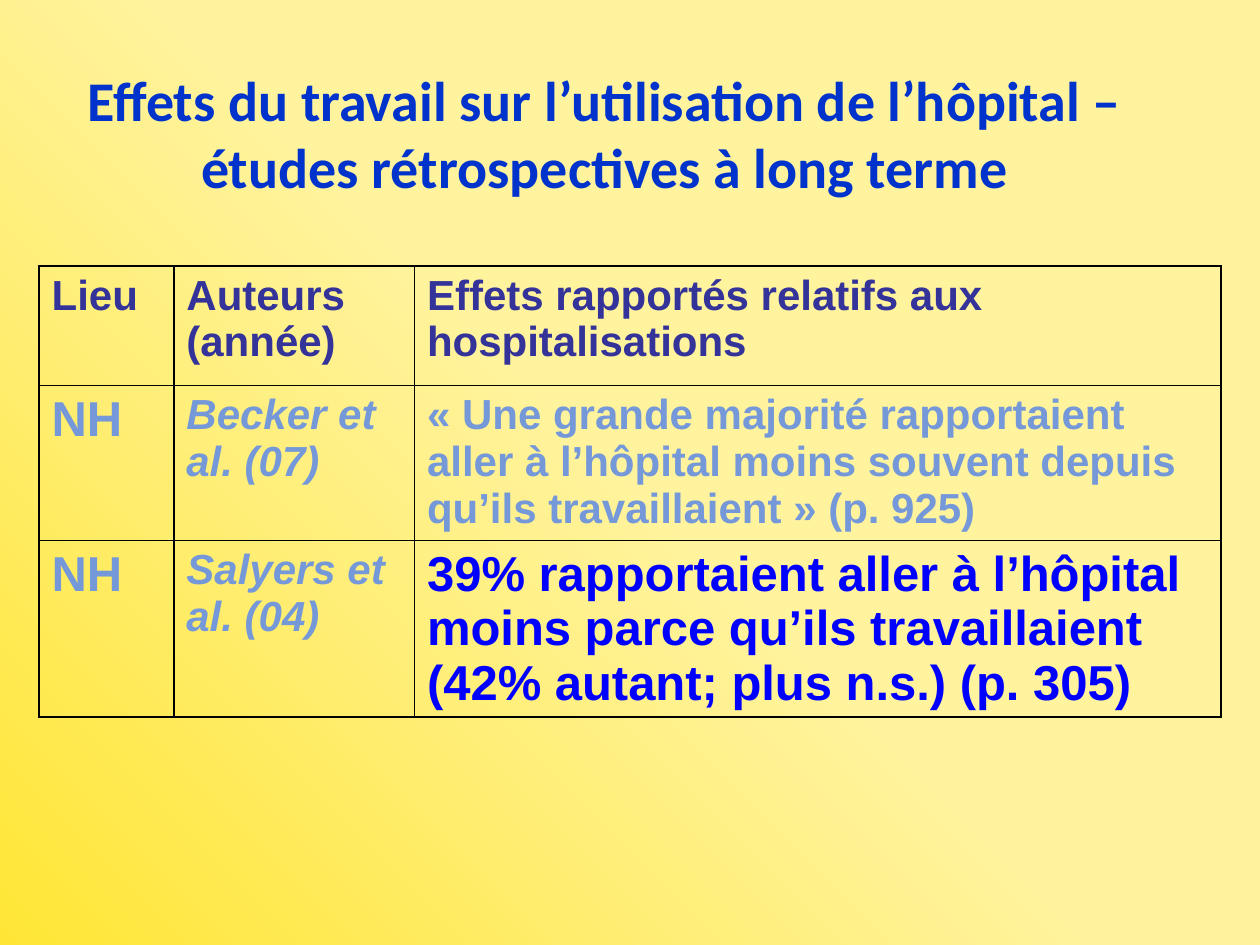
import copy
from dataclasses import dataclass

import pptx
import pptx.dml.color
import pptx.enum.text
import pptx.oxml
import pptx.oxml.ns
import pptx.slide
import pptx.table
import pptx.text.text
import pptx.util

RGBColor = pptx.dml.color.RGBColor
Inches = pptx.util.Inches

GOLD = RGBColor(0xFF, 0xE6, 0x36)
CREAM = RGBColor(0xFF, 0xF3, 0x9D)
TITLE_BLUE = RGBColor(0x00, 0x33, 0xCC)
HEADER_INDIGO = RGBColor(0x33, 0x33, 0x99)
SOFT_BLUE = RGBColor(0x75, 0x98, 0xD9)
STRONG_BLUE = RGBColor(0x00, 0x00, 0xFF)
BORDER_BLACK = RGBColor(0x00, 0x00, 0x00)

SLIDE_WIDTH, SLIDE_HEIGHT = Inches(10), Inches(7.5)
COLUMN_WIDTHS = (1.07, 1.91, 6.4)
ROW_HEIGHTS = (0.95, 1.23, 1.4)
TABLE_LEFT, TABLE_TOP = 0.31, 2.11
BACKGROUND_STOPS = ((0, GOLD), (0.5, CREAM), (1, CREAM))


@dataclass(frozen=True)
class Entry:
    text: str
    size: int = 24
    color: RGBColor = SOFT_BLUE
    italic: bool = False
    font: str = "Arial"


TITLE = Entry(
    "Effets du travail sur l’utilisation de l’hôpital –études rétrospectives à long terme",
    size=32, color=TITLE_BLUE, font="Calibri",
)
STUDIES = (
    (
        Entry("Lieu", color=HEADER_INDIGO),
        Entry("Auteurs (année)", color=HEADER_INDIGO),
        Entry("Effets rapportés relatifs aux hospitalisations", color=HEADER_INDIGO),
    ),
    (
        Entry("NH", size=28),
        Entry("Becker et al. (07)", italic=True),
        Entry("« Une grande majorité rapportaient aller à l’hôpital moins souvent "
              "depuis qu’ils travaillaient » (p. 925)"),
    ),
    (
        Entry("NH", size=28),
        Entry("Salyers et al. (04)", italic=True),
        Entry("39% rapportaient aller à l’hôpital moins parce qu’ils travaillaient "
              "(42% autant; plus n.s.) (p. 305)", size=28, color=STRONG_BLUE),
    ),
)


def paint_background(slide: pptx.slide.Slide) -> None:
    fill = slide.background.fill
    fill.gradient()
    fill.gradient_angle = 45
    stop_list = slide.element.xpath(".//a:gsLst")[0]
    stop_list.append(copy.deepcopy(stop_list[-1]))
    for stop, (position, color) in zip(fill.gradient_stops, BACKGROUND_STOPS):
        stop.position = position
        stop.color.rgb = color


def write_entry(frame: pptx.text.text.TextFrame, entry: Entry) -> None:
    run = frame.paragraphs[0].add_run()
    run.text = entry.text
    formats = {
        "name": entry.font,
        "size": pptx.util.Pt(entry.size),
        "bold": True,
        "italic": entry.italic,
    }
    for attribute, value in formats.items():
        setattr(run.font, attribute, value)
    run.font.color.rgb = entry.color


def outline_cell(cell: pptx.table._Cell) -> None:
    """Put a one-point line on all four sides, ahead of the cell's fill."""
    properties = cell._tc.get_or_add_tcPr()
    for index, side in enumerate(("lnL", "lnR", "lnT", "lnB")):
        properties.insert(index, pptx.oxml.parse_xml(
            f'<a:{side} {pptx.oxml.ns.nsdecls("a")} w="{pptx.util.Pt(1)}">'
            f'<a:solidFill><a:srgbClr val="{BORDER_BLACK}"/></a:solidFill></a:{side}>'
        ))


def add_title(slide: pptx.slide.Slide) -> None:
    title = slide.shapes.add_textbox(Inches(0.39), Inches(0.47), Inches(8.82), Inches(1.18))
    title.text_frame.word_wrap = True
    title.text_frame.auto_size = pptx.enum.text.MSO_AUTO_SIZE.SHAPE_TO_FIT_TEXT
    write_entry(title.text_frame, TITLE)
    title.text_frame.paragraphs[0].alignment = pptx.enum.text.PP_ALIGN.CENTER


def add_studies_table(slide: pptx.slide.Slide) -> None:
    table = slide.shapes.add_table(
        len(ROW_HEIGHTS), len(COLUMN_WIDTHS), Inches(TABLE_LEFT), Inches(TABLE_TOP),
        Inches(sum(COLUMN_WIDTHS)), Inches(sum(ROW_HEIGHTS)),
    ).table
    table.horz_banding = False
    for column, width in zip(table.columns, COLUMN_WIDTHS):
        column.width = Inches(width)
    for row, height, study in zip(table.rows, ROW_HEIGHTS, STUDIES):
        row.height = Inches(height)
        for cell, entry in zip(row.cells, study):
            cell.fill.background()
            outline_cell(cell)
            write_entry(cell.text_frame, entry)


def main() -> None:
    presentation = pptx.Presentation()
    presentation.slide_width, presentation.slide_height = SLIDE_WIDTH, SLIDE_HEIGHT
    slide = presentation.slides.add_slide(presentation.slide_layouts[6])
    paint_background(slide)
    add_studies_table(slide)
    add_title(slide)
    presentation.save("out.pptx")


if __name__ == "__main__":
    main()
